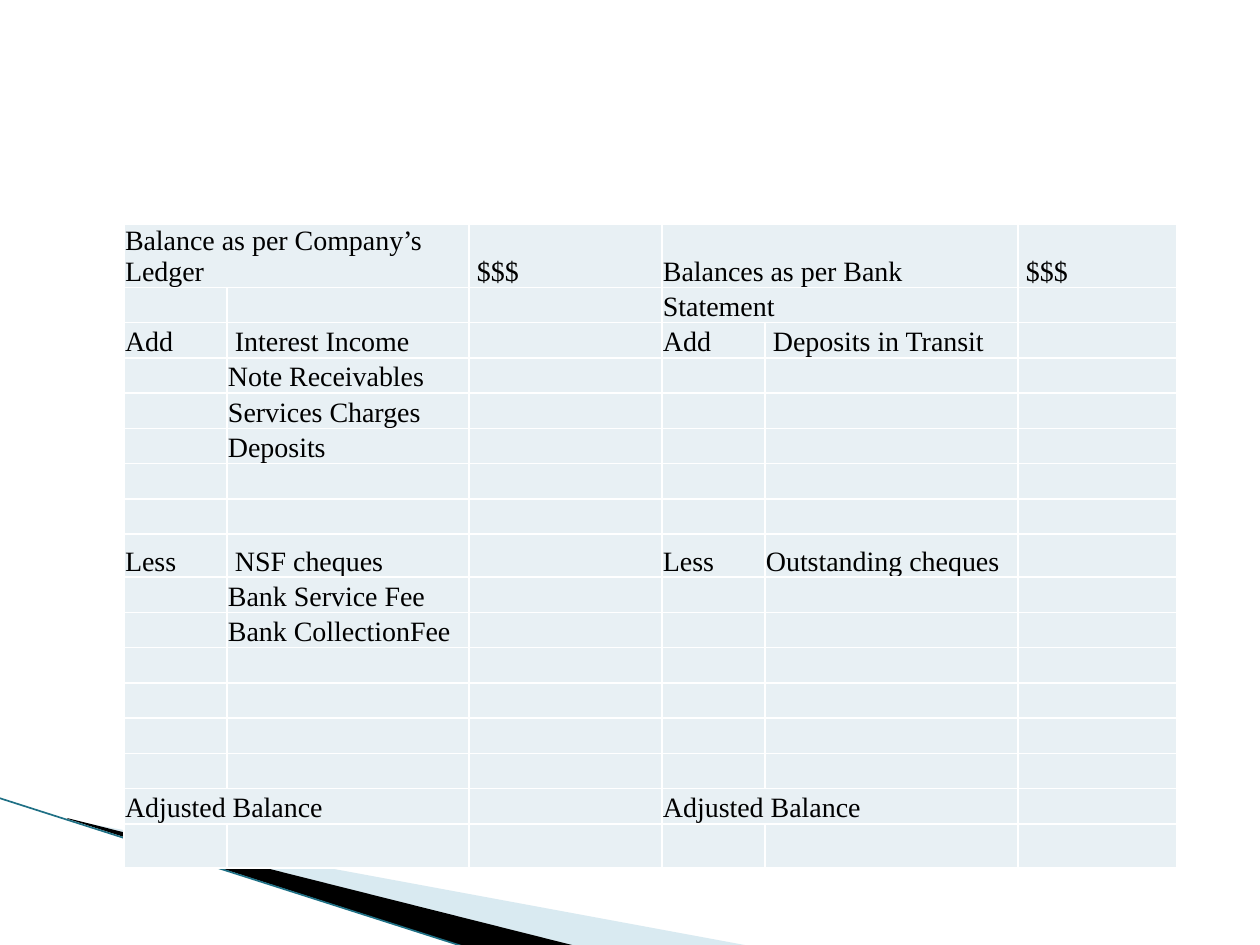
import lxml.etree
import pptx
import pptx.dml.color
import pptx.enum.shapes
import pptx.enum.text
import pptx.oxml.ns
import pptx.util

SCALE = 914400 / 126
INK = {"cell": "E8F0F4", "rule": "FFFFFF", "text": "000000",
       "pale": "A0CBDC", "dark": "000000", "edge": "1F7085"}
COLS = [103, 242, 193, 103, 253, 159]
ROWS = [35] * 8 + [43] + [35] * 7 + [44]
SPANS = [(0, 0), (0, 3), (1, 3), (15, 0), (15, 3)]
WORDS = {
    (0, 0): "Balance as per Company’s Ledger", (0, 2): " $$$",
    (0, 3): "Balances as per Bank", (0, 5): " $$$",
    (1, 3): "Statement",
    (2, 0): "Add", (2, 1): " Interest Income",
    (2, 3): "Add", (2, 4): " Deposits in Transit",
    (3, 1): "Note Receivables",
    (4, 1): "Services Charges",
    (5, 1): "Deposits",
    (8, 0): "Less", (8, 1): " NSF cheques",
    (8, 3): "Less", (8, 4): "Outstanding cheques",
    (9, 1): "Bank Service Fee",
    (10, 1): "Bank CollectionFee",
    (15, 0): "Adjusted Balance", (15, 3): "Adjusted Balance",
}


def px(num):
    """Turn pixels into EMU."""
    return pptx.util.Emu(round(num * SCALE))


def rgb(name):
    """Look up a colour."""
    return pptx.dml.color.RGBColor.from_string(INK[name])


def add(tree, tag, **attrs):
    """Append a DrawingML element."""
    return lxml.etree.SubElement(tree, pptx.oxml.ns.qn(tag), attrs)


def write(frame, text, size=16, face="Times New Roman", ink="text"):
    """Put formatted text in a frame, or size its empty line."""
    para = frame.paragraphs[0]
    if not text:
        add(para._p, "a:endParaRPr", sz=str(size * 100))
        return
    run = para.add_run()
    run.text = text
    run.font.size = pptx.util.Pt(size)
    run.font.name = face
    run.font.color.rgb = rgb(ink)


def style(cell):
    """Give a cell its borders, fill, insets and anchor."""
    props = cell._tc.get_or_add_tcPr()
    for side in ("a:lnL", "a:lnR", "a:lnT", "a:lnB"):
        line = add(props, side, w="12700")
        add(add(line, "a:solidFill"), "a:srgbClr", val=INK["rule"])
    cell.fill.solid()
    cell.fill.fore_color.rgb = rgb("cell")
    cell.margin_left = cell.margin_right = cell.margin_top = px(1)
    cell.margin_bottom = 0
    cell.vertical_anchor = pptx.enum.text.MSO_ANCHOR.BOTTOM


def ledger(slide, box):
    """Draw the bank reconciliation table."""
    frame = slide.shapes.add_table(len(ROWS), len(COLS), *map(px, box))
    table = frame.table
    table.first_row = table.horz_banding = False
    for col, width in zip(table.columns, COLS):
        col.width = px(width)
    for row, height in zip(table.rows, ROWS):
        row.height = px(height)
    for r in range(len(ROWS)):
        for c in range(len(COLS)):
            cell = table.cell(r, c)
            style(cell)
            write(cell.text_frame, WORDS.get((r, c), ""))
    for r, c in SPANS:
        table.cell(r, c).merge(table.cell(r, c + 1))


def wedge(slide, box, points, ink):
    """Draw a filled outline at the corner of a box."""
    form = slide.shapes.build_freeform(*points[0], scale=SCALE)
    form.add_line_segments(points[1:], close=True)
    shape = form.convert_to_shape(px(box[0]), px(box[1]))
    shape.shadow.inherit = False
    shape.fill.solid()
    shape.fill.fore_color.rgb = rgb(ink)
    shape.line.fill.background()
    return shape


def swoosh(slide, box):
    """Draw the wedges and edge line in the lower left corner."""
    left, top, wide, high = box
    pale = wedge(slide, box, [(70, 22), (751, 148), (576, 148), (70, 21)], "pale")
    tint = pale.fill._xPr.find(".//" + pptx.oxml.ns.qn("a:srgbClr"))
    add(tint, "a:alpha", val="40000")
    wedge(slide, box, [(68, 20), (577, 148), (470, 150), (69, 21)], "dark")
    edge = slide.shapes.add_connector(
        pptx.enum.shapes.MSO_CONNECTOR.STRAIGHT,
        px(left), px(top), px(left + 469), px(top + high))
    edge.line.color.rgb = rgb("edge")
    edge.line.width = pptx.util.Pt(0.95)
    add(edge._element.spPr, "a:effectLst")


def main():
    """Build and save the slide."""
    deck = pptx.Presentation()
    deck.slide_width, deck.slide_height = px(1260), px(945)
    slide = deck.slides.add_slide(deck.slide_layouts[6])
    swoosh(slide, (-1, 798, 751, 150))
    ledger(slide, (124, 224, sum(COLS), sum(ROWS)))
    deck.save("out.pptx")


if __name__ == "__main__":
    main()
